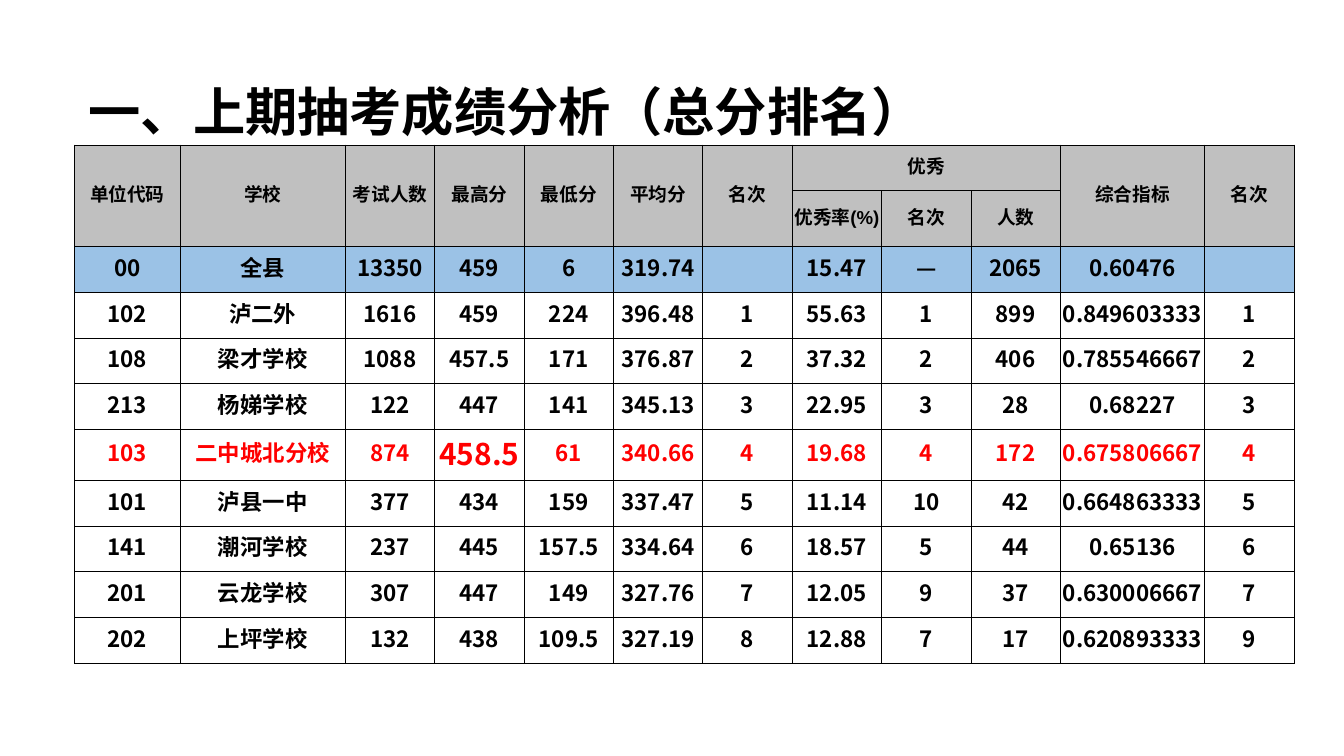
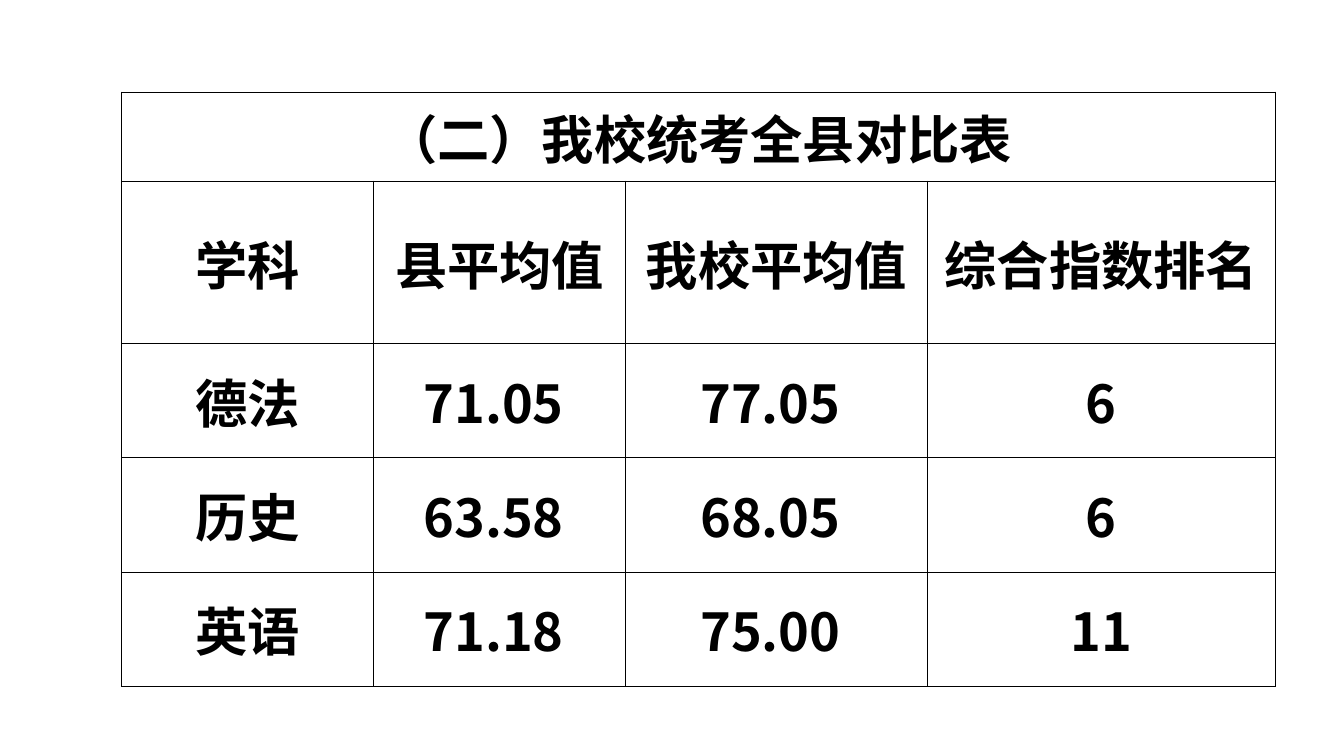
"""Build two slides of exam results: a score ranking and a subject comparison."""
from dataclasses import dataclass

from lxml import etree
from pptx import Presentation
from pptx.dml.color import RGBColor
from pptx.enum.text import MSO_ANCHOR, MSO_AUTO_SIZE, PP_ALIGN
from pptx.oxml.ns import qn
from pptx.util import Emu, Pt

MIDDLE = MSO_ANCHOR.MIDDLE
NO_AUTOSIZE = MSO_AUTO_SIZE.NONE
LEFT, CENTER = PP_ALIGN.LEFT, PP_ALIGN.CENTER

BLACK = RGBColor(0x00, 0x00, 0x00)
RED = RGBColor(0xFF, 0x00, 0x00)
GRAY = RGBColor(0xC0, 0xC0, 0xC0)
BLUE = RGBColor(0x9B, 0xC2, 0xE6)

LATIN_FONT = "Arial"
CHINESE_FONT = "Noto Sans CJK SC"
EMU_PER_PX = 4572
SLIDE_SIZE = (2000, 1125)
TITLE_ONLY, BLANK = 5, 6
BORDER_POINTS = 0.5
NORMAL_MARGINS = (20, 10, 20, 10)
TIGHT_MARGINS = (2, 2, 2, 10)

HEADER_ROWS = 2
COUNTY_ROW = 2
OUR_ROW = 6
SCHOOL_COLUMN = 1
TOP_SCORE_COLUMN = 3
EXCELLENT_COLUMNS = (7, 9)

RANKING = [
    ["单位代码", "学校", "考试人数", "最高分", "最低分", "平均分", "名次",
     "优秀", "", "", "综合指标", "名次"],
    ["", "", "", "", "", "", "", "优秀率(%)", "名次", "人数", "", ""],
    ["00", "全县", "13350", "459", "6", "319.74", "", "15.47", "—", "2065", "0.60476", ""],
    ["102", "泸二外", "1616", "459", "224", "396.48", "1", "55.63", "1", "899", "0.849603333", "1"],
    ["108", "梁才学校", "1088", "457.5", "171", "376.87", "2", "37.32", "2", "406", "0.785546667", "2"],
    ["213", "杨娣学校", "122", "447", "141", "345.13", "3", "22.95", "3", "28", "0.68227", "3"],
    ["103", "二中城北分校", "874", "458.5", "61", "340.66", "4", "19.68", "4", "172", "0.675806667", "4"],
    ["101", "泸县一中", "377", "434", "159", "337.47", "5", "11.14", "10", "42", "0.664863333", "5"],
    ["141", "潮河学校", "237", "445", "157.5", "334.64", "6", "18.57", "5", "44", "0.65136", "6"],
    ["201", "云龙学校", "307", "447", "149", "327.76", "7", "12.05", "9", "37", "0.630006667", "7"],
    ["202", "上坪学校", "132", "438", "109.5", "327.19", "8", "12.88", "7", "17", "0.620893333", "9"],
]
COMPARISON = [
    ["（二）我校统考全县对比表", "", "", ""],
    ["学科", "县平均值", "我校平均值", "综合指数排名"],
    ["德法", "71.05 ", "77.05 ", "6"],
    ["历史", "63.58 ", "68.05 ", "6"],
    ["英语", "71.18 ", "75.00 ", "11"],
]


@dataclass
class TextStyle:
    size: int = 28
    font: str = CHINESE_FONT
    color: RGBColor = BLACK
    fill: RGBColor | None = None


def px(length):
    return Emu(length * EMU_PER_PX)


class DeckBuilder:
    def __init__(self):
        self.deck = Presentation()
        self.deck.slide_width, self.deck.slide_height = map(px, SLIDE_SIZE)
        self.page = None

    def add_page(self, layout):
        self.page = self.deck.slides.add_slide(self.deck.slide_layouts[layout])

    def add_text(self, para, text, style, align):
        para.alignment = align
        if not text:
            para._p.get_or_add_endParaRPr().set("sz", str(style.size * 100))
            return
        span = para.add_run()
        span.text = text
        span.font.size = Pt(style.size)
        span.font.bold = True
        span.font.name = style.font
        span.font.color.rgb = style.color
        latin = span._r.rPr.find(qn("a:latin"))
        east_asian = etree.Element(qn("a:ea"), typeface=CHINESE_FONT)
        latin.addnext(east_asian)

    def title(self, text, left, top, width, height):
        box = self.page.shapes.title
        box.left, box.top, box.width, box.height = map(px, (left, top, width, height))
        frame = box.text_frame
        frame.auto_size = NO_AUTOSIZE
        frame.word_wrap = False
        frame.vertical_anchor = MIDDLE
        self.add_text(frame.paragraphs[0], text, TextStyle(), LEFT)

    def border(self, cell):
        properties = cell._tc.get_or_add_tcPr()
        for side in ("lnL", "lnR", "lnT", "lnB"):
            line = etree.SubElement(properties, qn(f"a:{side}"), w=str(Pt(BORDER_POINTS)))
            solid = etree.SubElement(line, qn("a:solidFill"))
            etree.SubElement(solid, qn("a:srgbClr"), val=str(BLACK))

    def cell(self, cell, text, style, margins):
        self.border(cell)
        if style.fill is None:
            cell.fill.background()
        else:
            cell.fill.solid()
            cell.fill.fore_color.rgb = style.fill
        cell.vertical_anchor = MIDDLE
        (cell.margin_left, cell.margin_top,
         cell.margin_right, cell.margin_bottom) = map(px, margins)
        self.add_text(cell.text_frame.paragraphs[0], text, style, CENTER)

    def table(self, left, top, widths, heights, rows, merges, style_of, margins):
        frame = self.page.shapes.add_table(
            len(heights), len(widths), px(left), px(top), px(sum(widths)), px(sum(heights)))
        table = frame.table
        table.first_row = table.horz_banding = False
        for column, width in zip(table.columns, widths):
            column.width = px(width)
        for row, height in zip(table.rows, heights):
            row.height = px(height)
        for row_index, texts in enumerate(rows):
            for column_index, text in enumerate(texts):
                self.cell(table.cell(row_index, column_index), text,
                          style_of(row_index, column_index), margins)
        for start, end in merges:
            table.cell(*start).merge(table.cell(*end))


def ranking_style(row, column):
    if row < HEADER_ROWS:
        return TextStyle(10, LATIN_FONT, fill=GRAY)
    style = TextStyle(12)
    if column == SCHOOL_COLUMN:
        style.font = LATIN_FONT
    if row == COUNTY_ROW:
        style.fill = BLUE
    if row == OUR_ROW:
        style.color = RED
        if column == TOP_SCORE_COLUMN:
            style.size = 16
    return style


def comparison_style(row, column):
    return TextStyle()


def main():
    builder = DeckBuilder()

    builder.add_page(TITLE_ONLY)
    builder.title("一、上期抽考成绩分析（总分排名）", 112, 108, 1286, 114)
    first, last = EXCELLENT_COLUMNS
    widths = [157, 246] + [133] * 8 + [215, 133]
    merges = [((0, column), (1, column)) for column in range(len(widths))
              if not first <= column <= last]
    merges.append(((0, first), (0, last)))
    builder.table(111, 216, widths, [68] * len(RANKING), RANKING, merges,
                  ranking_style, TIGHT_MARGINS)

    builder.add_page(BLANK)
    builder.table(181, 137, [375, 375, 449, 518], [114, 242] + [170] * 3, COMPARISON,
                  [((0, 0), (0, 3))], comparison_style, NORMAL_MARGINS)

    builder.deck.save("out.pptx")


if __name__ == "__main__":
    main()
